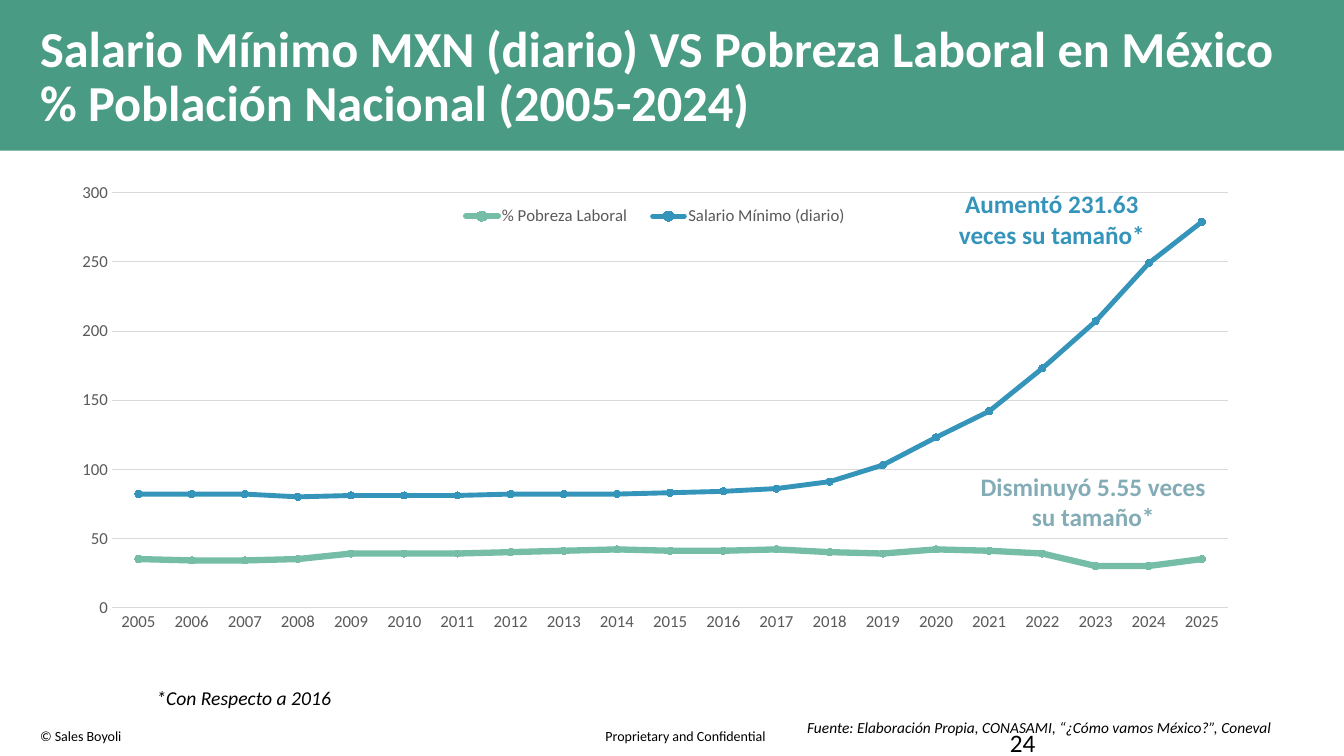
"""Build the slide comparing the minimum wage with labour poverty in Mexico."""
from dataclasses import dataclass, field
from typing import Any

from lxml.etree import SubElement
from pptx import Presentation
from pptx.chart.data import CategoryChartData
from pptx.dml.color import RGBColor
from pptx.enum.chart import XL_CHART_TYPE, XL_LEGEND_POSITION, XL_MARKER_STYLE, XL_TICK_MARK
from pptx.enum.shapes import MSO_SHAPE
from pptx.enum.text import MSO_ANCHOR, PP_ALIGN
from pptx.oxml import parse_xml
from pptx.oxml.ns import nsdecls, qn
from pptx.util import Cm, Pt


@dataclass(frozen=True)
class Theme:
    font: str = "Calibri"
    band: str = "4A9B83"
    white: str = "FFFFFF"
    ink: str = "000000"
    axis: str = "595959"
    grid: str = "D9D9D9"
    wage: str = "3494BA"
    poverty: str = "75BDA7"
    poverty_marker: str = "58B6C0"
    poverty_note: str = "84ACB6"
    title_size: int = 36
    note_size: int = 18
    remark_size: int = 14
    axis_size: int = 12
    source_size: int = 11
    footer_size: int = 10


@dataclass(frozen=True)
class Frame:
    left: float
    top: float
    width: float
    height: float

    def lengths(self) -> tuple[Cm, Cm, Cm, Cm]:
        return Cm(self.left), Cm(self.top), Cm(self.width), Cm(self.height)


@dataclass(frozen=True)
class Label:
    text: str
    frame: Frame
    size: int
    color: str
    font: dict[str, Any] = field(default_factory=dict)
    para: dict[str, Any] = field(default_factory=dict)
    box: dict[str, Any] = field(default_factory=dict)


@dataclass(frozen=True)
class Trend:
    name: str
    values: tuple[int, ...]
    color: str
    marker_color: str
    width: float


THEME = Theme()
BAND = Frame(0, 0, 33.87, 3.8)
CHART = Frame(1.47, 4.34, 30.1, 12.7)
PLOT_AREA = Frame(1.35, 0.52, 28.14, 10.45)
LEGEND_AREA = Frame(9.78, 0.66, 10.54, 0.89)
YEARS = [str(year) for year in range(2005, 2026)]

TRENDS = [
    Trend("Salario Mínimo (diario)",
          (82, 82, 82, 80, 81, 81, 81, 82, 82, 82, 83, 84, 86, 91, 103, 123, 142, 173, 207, 249, 279),
          THEME.wage, THEME.wage, 3.5),
    Trend("% Pobreza Laboral",
          (35, 34, 34, 35, 39, 39, 39, 40, 41, 42, 41, 41, 42, 40, 39, 42, 41, 39, 30, 30, 35),
          THEME.poverty, THEME.poverty_marker, 4.5),
]

BOLD = {"bold": True}
ITALIC = {"italic": True}
CENTERED = {"alignment": PP_ALIGN.CENTER}

HEADINGS = [
    Label("Proprietary and Confidential", Frame(15.01, 18.21, 4.6, 0.69),
          THEME.footer_size, THEME.ink, box={"word_wrap": False}),
    Label("© Sales Boyoli", Frame(0.76, 18.21, 8.56, 0.69), THEME.footer_size, THEME.ink),
    Label("24", Frame(25.2, 18.21, 7.9, 0.64), THEME.note_size, THEME.ink),
    Label("Salario Mínimo MXN (diario) VS Pobreza Laboral en México % Población Nacional (2005-2024)",
          Frame(0.76, 0.36, 32.31, 3.23), THEME.title_size, THEME.white, BOLD,
          {"line_spacing": 0.9}, {"vertical_anchor": MSO_ANCHOR.MIDDLE}),
]

NOTES = [
    Label("Aumentó 231.63 veces su tamaño*", Frame(23.41, 4.63, 6.2, 1.8),
          THEME.note_size, THEME.wage, BOLD, CENTERED),
    Label("Disminuyó 5.55 veces su tamaño*", Frame(24.45, 11.75, 6.2, 1.8),
          THEME.note_size, THEME.poverty_note, BOLD, CENTERED),
    Label("*Con Respecto a 2016", Frame(3.69, 17.15, 7.44, 0.86),
          THEME.remark_size, THEME.ink, ITALIC),
    Label("Fuente: Elaboración Propia, CONASAMI, “¿Cómo vamos México?”, Coneval",
          Frame(20.09, 17.96, 12.47, 0.74), THEME.source_size, THEME.ink, ITALIC),
]


def apply_format(target: Any, values: dict[str, Any]) -> None:
    for name, value in values.items():
        setattr(target, name, value)


def style_font(font: Any, size: int, color: str, extra: dict[str, Any] | None = None) -> None:
    apply_format(font, {"name": THEME.font, "size": Pt(size)} | (extra or {}))
    font.color.rgb = RGBColor.from_string(color)


def fill_solid(fill: Any, color: str) -> None:
    fill.solid()
    fill.fore_color.rgb = RGBColor.from_string(color)


def style_line(line: Any, color: str, width: float) -> None:
    fill_solid(line.fill, color)
    line.width = Pt(width)


def add_label(page: Any, label: Label) -> None:
    box = page.shapes.add_textbox(*label.frame.lengths()).text_frame
    apply_format(box, {"word_wrap": True} | label.box)
    para = box.paragraphs[0]
    apply_format(para, label.para)
    span = para.add_run()
    span.text = label.text
    style_font(span.font, label.size, label.color, label.font)


def add_band(page: Any) -> None:
    band = page.shapes.add_shape(MSO_SHAPE.RECTANGLE, *BAND.lengths())
    band.shadow.inherit = False
    fill_solid(band.fill, THEME.band)
    band.line.fill.background()


def manual_layout(area: Frame, inner: bool = False) -> Any:
    layout = parse_xml(f"<c:layout {nsdecls('c')}><c:manualLayout/></c:layout>")
    settings = {"layoutTarget": "inner"} if inner else {}
    settings |= {"xMode": "edge", "yMode": "edge",
                 "x": area.left / CHART.width, "y": area.top / CHART.height,
                 "w": area.width / CHART.width, "h": area.height / CHART.height}
    for name, value in settings.items():
        SubElement(layout[0], qn(f"c:{name}")).set("val", str(value))
    return layout


def place_chart_parts(chart: Any) -> None:
    plot_area = chart._chartSpace.find(".//" + qn("c:plotArea"))
    legend = chart.legend._element
    for part in (plot_area, legend):
        for layout in part.findall(qn("c:layout")):
            part.remove(layout)
    plot_area.insert(0, manual_layout(PLOT_AREA, inner=True))
    legend.find(qn("c:legendPos")).addnext(manual_layout(LEGEND_AREA))
    wage, poverty = plot_area.findall(".//" + qn("c:ser"))
    wage.addprevious(poverty)


def add_trend_chart(page: Any) -> None:
    data = CategoryChartData()
    data.categories = YEARS
    for trend in TRENDS:
        data.add_series(trend.name, trend.values)
    chart = page.shapes.add_chart(XL_CHART_TYPE.LINE_MARKERS, *CHART.lengths(), data).chart
    apply_format(chart, {"has_title": False, "has_legend": True})
    style_font(chart.font, THEME.footer_size, THEME.ink)
    apply_format(chart.legend, {"position": XL_LEGEND_POSITION.BOTTOM, "include_in_layout": False})
    style_font(chart.legend.font, THEME.axis_size, THEME.axis)
    chart.plots[0].vary_by_categories = False
    for axis in (chart.category_axis, chart.value_axis):
        apply_format(axis, {"major_tick_mark": XL_TICK_MARK.NONE, "minor_tick_mark": XL_TICK_MARK.NONE})
        style_font(axis.tick_labels.font, THEME.axis_size, THEME.axis)
    style_line(chart.category_axis.format.line, THEME.grid, 0.75)
    apply_format(chart.value_axis, {"minimum_scale": 0, "maximum_scale": 300, "major_unit": 50})
    chart.value_axis.format.line.fill.background()
    style_line(chart.value_axis.major_gridlines.format.line, THEME.grid, 0.75)
    for trend, series in zip(TRENDS, chart.plots[0].series):
        series.smooth = False
        style_line(series.format.line, trend.color, trend.width)
        series.format.line._get_or_add_ln().set("cap", "rnd")
        apply_format(series.marker, {"style": XL_MARKER_STYLE.CIRCLE, "size": 5})
        fill_solid(series.marker.format.fill, trend.marker_color)
        style_line(series.marker.format.line, trend.marker_color, 0.75)
    place_chart_parts(chart)


def main() -> None:
    deck = Presentation()
    apply_format(deck, {"slide_width": Cm(33.87), "slide_height": Cm(19.05)})
    page = deck.slides.add_slide(deck.slide_layouts[6])
    add_band(page)
    for label in HEADINGS:
        add_label(page, label)
    add_trend_chart(page)
    for label in NOTES:
        add_label(page, label)
    deck.save("out.pptx")


if __name__ == "__main__":
    main()
